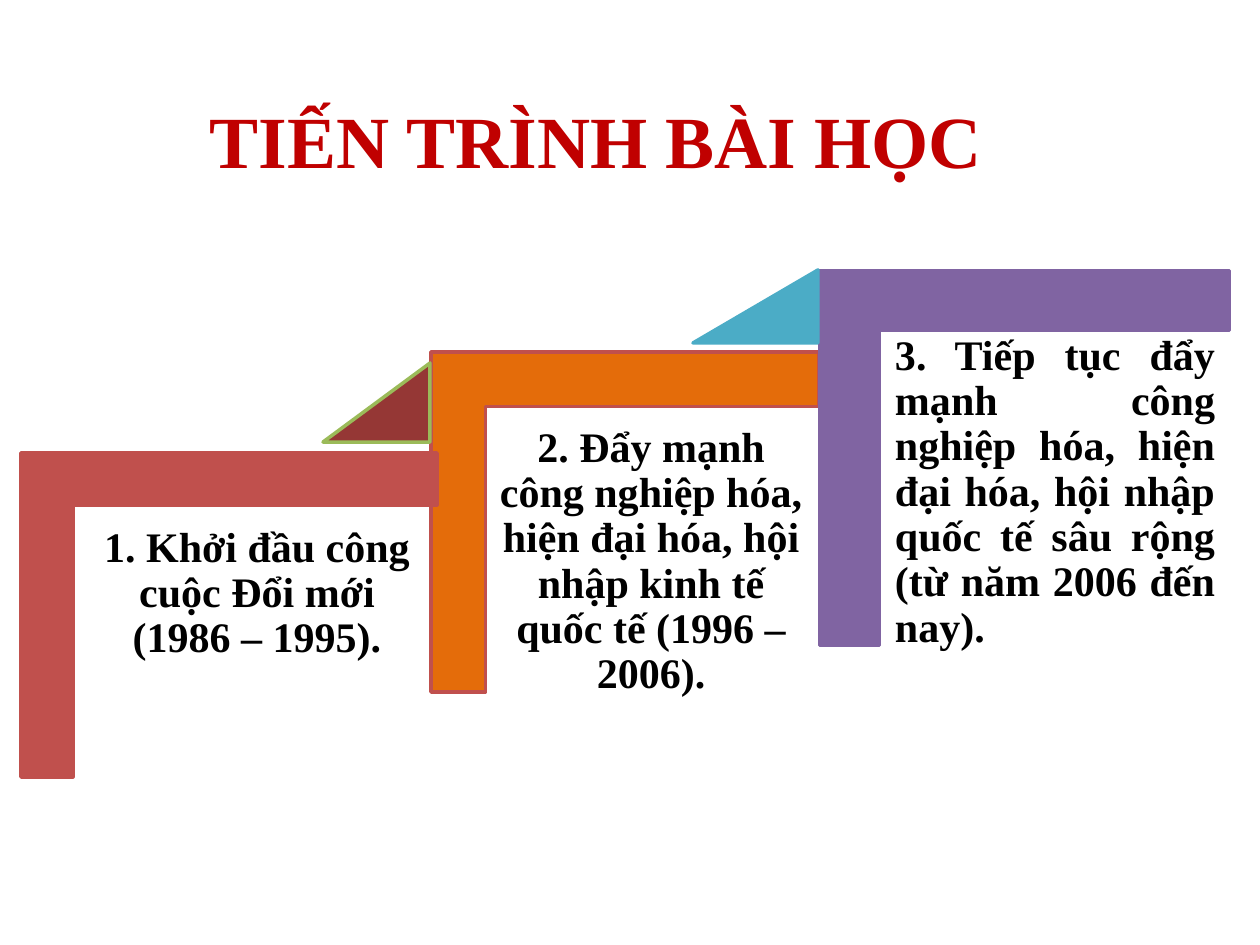
from pptx import Presentation
from pptx.dml.color import RGBColor
from pptx.enum.shapes import MSO_SHAPE as Shape
from pptx.enum.text import MSO_ANCHOR as Anchor, MSO_AUTO_SIZE as AutoSize, PP_ALIGN as Align
from pptx.util import Emu, Pt

PX_PER_INCH = 126
BLACK = RGBColor(0x00, 0x00, 0x00)
TITLE_RED = RGBColor(0xC0, 0x00, 0x00)
RED = RGBColor(0xC0, 0x50, 0x4D)
DARK_RED = RGBColor(0x95, 0x37, 0x35)
ORANGE = RGBColor(0xE4, 0x6C, 0x0A)
GREEN = RGBColor(0x9B, 0xBB, 0x59)
PURPLE = RGBColor(0x80, 0x64, 0xA2)
TEAL = RGBColor(0x4B, 0xAC, 0xC6)


def px(length):
    return Emu(round(length * 914400 / PX_PER_INCH))


class LessonPage:
    font_name = "Times New Roman"
    line_width = Pt(2)
    bar_ratio = 0.16

    def __init__(self, deck):
        self.page = deck.slides.add_slide(deck.slide_layouts[6])

    def figure(self, preset, at, adjustments, fill, line):
        shape = self.page.shapes.add_shape(preset, *map(px, at))
        shape.shadow.inherit = False
        for index, value in enumerate(adjustments):
            shape.adjustments[index] = value
        shape.fill.solid()
        shape.fill.fore_color.rgb = fill
        shape.line.color.rgb = line
        shape.line.width = self.line_width
        return shape

    def step(self, at, fill, line):
        """Add an L shape turned so that its bars run along the top and left."""
        corner = self.figure(Shape.CORNER, at, [self.bar_ratio] * 2, fill, line)
        corner.rotation = 90

    def wedge(self, at, fill, line):
        """Add a right triangle that climbs to the next step."""
        self.figure(Shape.ISOSCELES_TRIANGLE, at, [1], fill, line)

    def text(self, at, words, size=24, color=BLACK, align=Align.CENTER,
             inset=13, spacing=0.9, wrap=True):
        box = self.page.shapes.add_textbox(*map(px, at))
        frame = box.text_frame
        frame.word_wrap = wrap
        frame.auto_size = AutoSize.NONE if wrap else AutoSize.SHAPE_TO_FIT_TEXT
        frame.vertical_anchor = Anchor.TOP
        frame.margin_left = frame.margin_right = px(inset)
        frame.margin_top = frame.margin_bottom = px(inset)
        para = frame.paragraphs[0]
        para.text = words
        para.alignment = align
        para.line_spacing = spacing
        para.font.name = self.font_name
        para.font.size = Pt(size)
        para.font.bold = True
        para.font.color.rgb = color


def main():
    deck = Presentation()
    deck.slide_width = px(1260)
    deck.slide_height = px(945)
    lesson = LessonPage(deck)

    lesson.step((455, 328, 340, 388), ORANGE, RED)
    lesson.text((84, 513, 346, 263), "1. Khởi đầu công cuộc Đổi mới (1986 – 1995).")
    lesson.wedge((323, 363, 107, 79), DARK_RED, GREEN)
    lesson.step((837, 253, 375, 410), PURPLE, PURPLE)
    lesson.text((882, 321, 346, 287),
                "3. Tiếp tục đẩy mạnh công nghiệp hóa, hiện đại hóa, "
                "hội nhập quốc tế sâu rộng (từ năm 2006 đến nay).",
                align=Align.JUSTIFY)
    lesson.wedge((693, 270, 125, 73), TEAL, TEAL)
    lesson.text((210, 95, 780, 89), "TIẾN TRÌNH BÀI HỌC", size=42, color=TITLE_RED,
                align=Align.LEFT, inset=0, spacing=1.0, wrap=False)
    lesson.step((67, 407, 324, 416), RED, RED)
    lesson.text((483, 413, 336, 277),
                "2. Đẩy mạnh công nghiệp hóa, hiện đại hóa, "
                "hội nhập kinh tế quốc tế (1996 – 2006).")

    deck.save("out.pptx")


if __name__ == "__main__":
    main()
